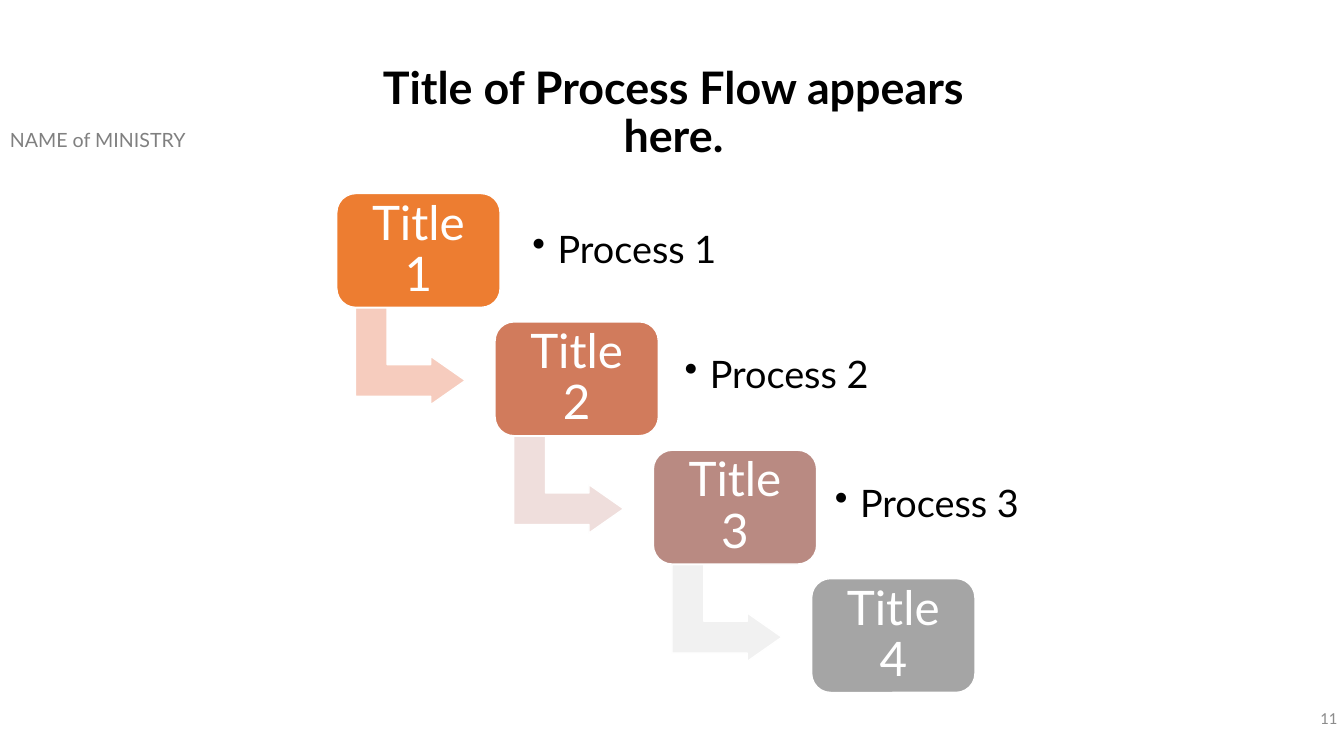
from dataclasses import dataclass

from lxml import etree
from pptx import Presentation
from pptx.dml.color import RGBColor
from pptx.enum import shapes, text
from pptx.oxml import ns
from pptx.util import Inches, Pt


@dataclass(frozen=True)
class Theme:
    font: str = "Lato"
    number_font: str = "Calibri"
    black: str = "000000"
    white: str = "FFFFFF"
    header_grey: str = "808080"
    number_grey: str = "8C8C8C"
    title_size: int = 32
    step_size: int = 34
    process_size: int = 27
    header_size: int = 14
    number_size: int = 12
    line_spacing: float = 0.9


# Box colour, colour of the arrow to the next step, process label and its frame
STEPS = [
    ("ED7D31", "F6CCBE", "Process 1", (5.14, 2.03, 2.13, 0.92)),
    ("D17B5C", "EFDEDC", "Process 2", (6.65, 3.27, 3.14, 0.92)),
    ("B98A82", "F1F1F1", "Process 3", (8.14, 4.55, 2.62, 0.92)),
    ("A5A5A5", None, None, None),
]
FIRST_LEFT, FIRST_TOP = 3.34, 1.92
STEP_RIGHT, STEP_DOWN = 1.57, 3.82 / 3
PADDING = 0.14


class ProcessSlide:
    def __init__(self, presentation, theme):
        self.theme = theme
        self.slide = presentation.slides.add_slide(presentation.slide_layouts[5])

    def set_text(self, shape, words, size, color, align=text.PP_ALIGN.LEFT,
                 anchor=text.MSO_ANCHOR.TOP, font=None, bold=False, spacing=None,
                 padding=None):
        frame = shape.text_frame
        frame.text = words
        frame.word_wrap = True
        frame.auto_size = text.MSO_AUTO_SIZE.NONE
        frame.vertical_anchor = anchor
        if padding is not None:
            frame.margin_left = frame.margin_right = Inches(padding)
            frame.margin_top = frame.margin_bottom = Inches(padding)
        paragraph = frame.paragraphs[0]
        paragraph.alignment = align
        if spacing:
            paragraph.line_spacing = spacing
        run_font = paragraph.runs[0].font
        run_font.name = font or self.theme.font
        run_font.size = Pt(size)
        run_font.bold = bold
        run_font.color.rgb = RGBColor.from_string(color)
        return paragraph

    def title(self, words, frame):
        title = self.slide.shapes.title
        title.left, title.top, title.width, title.height = map(Inches, frame)
        self.set_text(title, words, self.theme.title_size, self.theme.black,
                      text.PP_ALIGN.CENTER, bold=True,
                      spacing=self.theme.line_spacing)

    def label(self, words, frame, size, color, **style):
        box = self.slide.shapes.add_textbox(*map(Inches, frame))
        return self.set_text(box, words, size, color, **style)

    def bullet(self, words, frame):
        paragraph = self.label(words, frame, self.theme.process_size,
                               self.theme.black, anchor=text.MSO_ANCHOR.MIDDLE,
                               spacing=self.theme.line_spacing, padding=PADDING)
        properties = paragraph._p.get_or_add_pPr()
        properties.set("marL", str(Inches(0.25)))
        properties.set("indent", str(Inches(-0.25)))
        etree.SubElement(properties, ns.qn("a:buChar"), char="•")

    def filled_shape(self, kind, frame, color, adjustments):
        shape = self.slide.shapes.add_shape(kind, *map(Inches, frame))
        shape.shadow.inherit = False
        shape.fill.solid()
        shape.fill.fore_color.rgb = RGBColor.from_string(color)
        shape.line.color.rgb = RGBColor.from_string(self.theme.white)
        shape.line.width = Pt(1)
        for index, value in enumerate(adjustments):
            shape.adjustments[index] = value
        return shape

    def step_box(self, words, left, top, color):
        box = self.filled_shape(shapes.MSO_SHAPE.ROUNDED_RECTANGLE,
                                (left, top, 1.62, 1.13), color, [0.167])
        self.set_text(box, words, self.theme.step_size, self.theme.white,
                      text.PP_ALIGN.CENTER, text.MSO_ANCHOR.MIDDLE,
                      spacing=self.theme.line_spacing, padding=PADDING)

    def step_arrow(self, left, top, color):
        arrow = self.filled_shape(shapes.MSO_SHAPE.BENT_UP_ARROW,
                                  (left, top, 0.96, 1.09), color,
                                  [0.328, 0.25, 0.358])
        arrow.rotation = 90


def main():
    presentation = Presentation()
    presentation.slide_width = Inches(13.33)
    presentation.slide_height = Inches(7.5)
    theme = Theme()
    page = ProcessSlide(presentation, theme)

    page.title("Title of Process Flow appears here.", (3.28, 0.6, 6.8, 1.07))
    page.label("NAME of MINISTRY", (0, 1.22, 2.9, 0.34),
               theme.header_size, theme.header_grey)
    page.label("11", (10.36, 6.92, 3, 0.4), theme.number_size, theme.number_grey,
               align=text.PP_ALIGN.RIGHT, anchor=text.MSO_ANCHOR.MIDDLE,
               font=theme.number_font)

    for index, (color, arrow_color, process, process_frame) in enumerate(STEPS):
        left = FIRST_LEFT + index * STEP_RIGHT
        top = FIRST_TOP + index * STEP_DOWN
        if arrow_color:
            page.step_arrow(left + 0.25, top + 1.07, arrow_color)
        page.step_box(f"Title {index + 1}", left, top, color)
        if process:
            page.bullet(process, process_frame)

    presentation.save("out.pptx")


if __name__ == "__main__":
    main()
